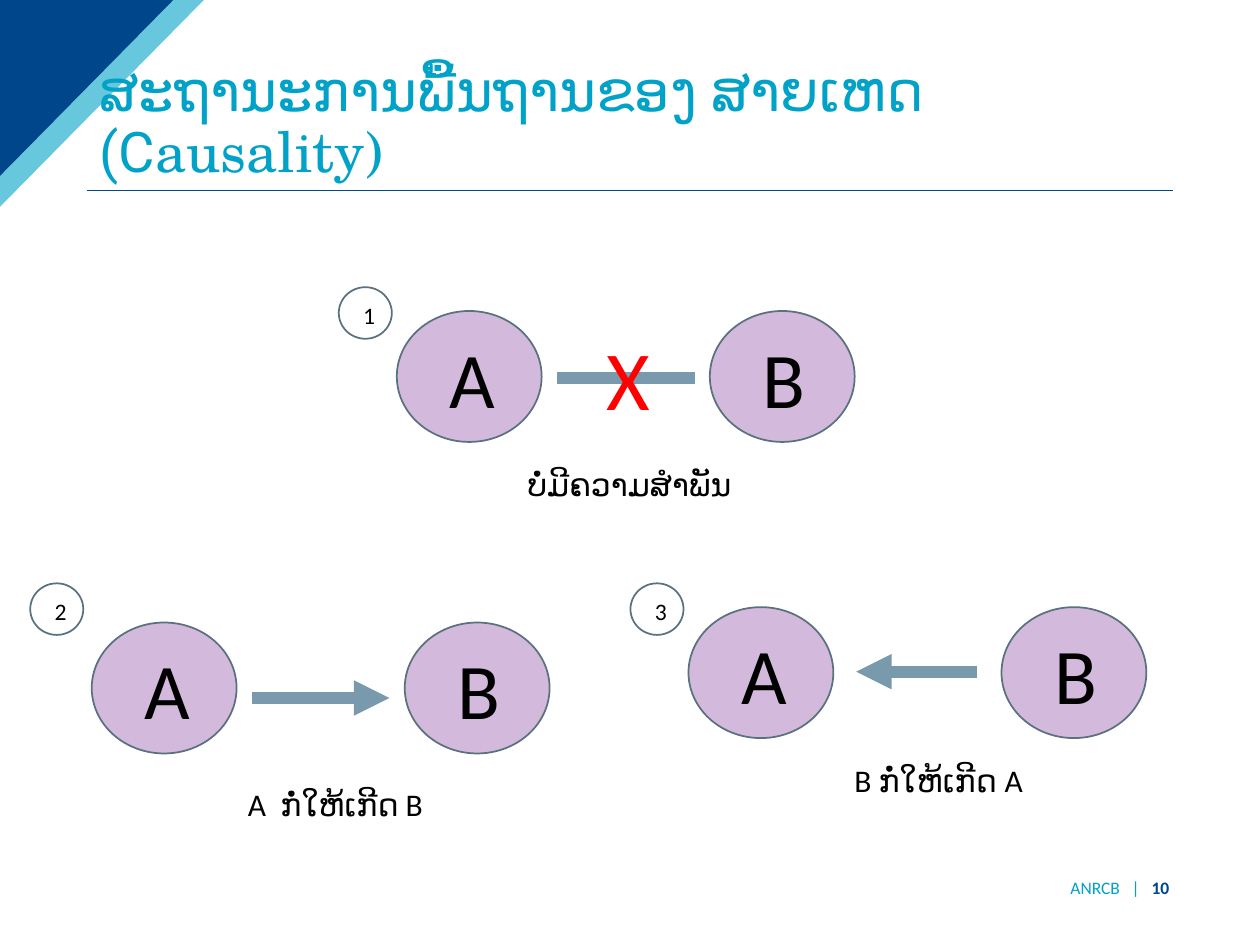
from dataclasses import dataclass
from pptx import Presentation
from pptx.dml.color import RGBColor
from pptx.enum.dml import MSO_LINE
from pptx.enum.shapes import MSO_CONNECTOR, MSO_SHAPE
from pptx.enum.text import MSO_ANCHOR, MSO_AUTO_SIZE, PP_ALIGN
from pptx.oxml.ns import qn
from pptx.util import Cm, Pt
from lxml.etree import SubElement


@dataclass(frozen=True)
class Theme:
    navy: str = "00468B"
    cyan: str = "00A2C7"
    lilac: str = "D3B9DB"
    white: str = "FFFFFF"
    edge: str = "5A717F"
    steel: str = "7999AC"
    ink: str = "000000"
    red: str = "FF0000"
    sans: str = "Calibri"
    lao: str = "Roboto"
    serif: str = "TeX Gyre Schola"
    head: float = 32
    cross: float = 48
    letter: float = 45
    label: float = 18
    badge: float = 13.5
    foot: float = 10


@dataclass(frozen=True)
class Box:
    x: float
    y: float
    w: float
    h: float

    def inset(self, dx, dy, w, h):
        return Box(self.x + dx, self.y + dy, w, h)

    def emu(self):
        return Cm(self.x), Cm(self.y), Cm(self.w), Cm(self.h)


theme = Theme()


def paint(shape, fill, edge=None):
    shape.shadow.inherit = False
    shape.fill.solid()
    shape.fill.fore_color.rgb = RGBColor.from_string(fill)
    if edge:
        shape.line.color.rgb = RGBColor.from_string(edge)
        shape.line.width = Pt(1)
    else:
        shape.line.fill.background()


def style(run, face, size, color):
    run.font.name = face
    run.font.size = Pt(size)
    run.font.color.rgb = RGBColor.from_string(color)
    SubElement(run.font._element, qn("a:cs")).set("typeface", face)


def write(frame, parts, size, color, align=PP_ALIGN.LEFT):
    para = frame.paragraphs[0]
    para.alignment = align
    para.text = parts[0][0]
    for text, _ in parts[1:]:
        para.add_run().text = text
    for run, (_, face) in zip(para.runs, parts):
        style(run, face, size, color)
    return para


def label(shapes, box, parts, size, color, align=PP_ALIGN.LEFT, wrap=True):
    frame = shapes.add_textbox(*box.emu()).text_frame
    frame.word_wrap = wrap
    return frame, write(frame, parts, size, color, align)


def disc(slide, box, inner, text, size, fill):
    shapes = slide.shapes.add_group_shape().shapes
    paint(shapes.add_shape(MSO_SHAPE.OVAL, *box.emu()), fill, theme.edge)
    label(shapes, inner, [(text, theme.sans)], size, theme.ink, wrap=False)


def rule(slide, start, end, color, width, arrow=False):
    line = slide.shapes.add_connector(
        MSO_CONNECTOR.STRAIGHT, *map(Cm, (*start, *end)))
    line.line.color.rgb = RGBColor.from_string(color)
    line.line.width = Pt(width)
    line.line.dash_style = MSO_LINE.SOLID
    if arrow:
        SubElement(line.line._ln, qn("a:tailEnd")).set("type", "triangle")
    SubElement(line._element.spPr, qn("a:effectLst"))


def corner(slide, box):
    for scale, color, alpha in ((1, theme.cyan, 60), (0.85, theme.navy, 100)):
        right, base = box.x + box.w * scale, box.y + box.h * scale
        form = slide.shapes.build_freeform(Cm(box.x), Cm(box.y))
        form.add_line_segments([(Cm(right), Cm(box.y)), (Cm(box.x), Cm(base))])
        shape = form.convert_to_shape()
        paint(shape, color)
        if alpha < 100:
            tint = shape._element.spPr.find(".//" + qn("a:srgbClr"))
            SubElement(tint, qn("a:alpha")).set("val", str(alpha * 1000))


def header(slide, box):
    rule(slide, (box.x, box.y + box.h), (box.x + box.w, box.y + box.h),
         theme.navy, 0.75)
    title = slide.shapes.title
    slide.shapes._spTree.append(title._element)
    title.left, title.top, title.width, title.height = box.emu()
    frame = title.text_frame
    frame.auto_size = MSO_AUTO_SIZE.NONE
    frame.vertical_anchor = MSO_ANCHOR.BOTTOM
    parts = [("ສະຖານະການພື້ນຖານຂອງ ສາຍເຫດ (C", theme.lao),
             ("ausality)", theme.serif)]
    write(frame, parts, theme.head, theme.cyan).line_spacing = 0.9


def case(slide, box, number, badge, link, note, parts, arrow=True):
    for dx, text in ((0, "A"), (box.w - 2.92, "B")):
        disc(slide, box.inset(dx, 0, 2.92, 2.64),
             box.inset(dx + 0.82, 0.25, 0.84, 2.18),
             text, theme.letter, theme.lilac)
    start, end, dy = link
    rule(slide, (box.x + start, box.y + dy), (box.x + end, box.y + dy),
         theme.steel, 6.75, arrow)
    if not arrow:
        label(slide.shapes, box.inset(3.51, 0.18, 2.31, 2.31),
              [("X", theme.sans)], theme.cross, theme.red, PP_ALIGN.CENTER)
    mid, top, width = note
    label(slide.shapes, box.inset(mid - width / 2, top, width, 1.02),
          parts, theme.label, theme.ink, PP_ALIGN.CENTER)
    dx, dy = badge
    disc(slide, box.inset(dx, dy, 1.07, 1.04),
         box.inset(dx + 0.24, dy + 0.15, 0.58, 0.84),
         number, theme.badge, theme.white)


def footer(slide, box):
    frame, para = label(
        slide.shapes, box,
        [("ANRCB   |   ", theme.sans), ("10", theme.sans)],
        theme.foot, theme.cyan, PP_ALIGN.RIGHT)
    frame.vertical_anchor = MSO_ANCHOR.MIDDLE
    page = para.runs[1].font
    page.bold = True
    page.color.rgb = RGBColor.from_string(theme.navy)


def main():
    deck = Presentation()
    deck.slide_width, deck.slide_height = Cm(25.4), Cm(19.05)
    slide = deck.slides.add_slide(deck.slide_layouts[5])
    corner(slide, Box(0, 0, 4.11, 4.17))
    header(slide, Box(1.75, 1.02, 21.9, 2.82))
    case(slide, Box(8, 6.27, 9.23, 2.64), "1", (-1.17, -0.48),
         (3.23, 6.02, 1.35), (4.69, 2.97, 5.56),
         [("ບໍ່ມີຄວາມສຳພັນ", theme.lao)], arrow=False)
    case(slide, Box(1.85, 12.55, 9.23, 2.64), "2", (-1.24, -0.79),
         (3.23, 6, 1.52), (4.91, 3.15, 4.39),
         [("A  ", theme.sans), ("ກໍ່ໃຫ້ເກີດ", theme.lao), (" B", theme.sans)])
    case(slide, Box(13.88, 12.24, 9.23, 2.64), "3", (-1.17, -0.48),
         (5.82, 3.38, 1.3), (5.04, 2.97, 4.19),
         [("B ", theme.sans), ("ກໍ່ໃຫ້ເກີດ ", theme.lao), ("A", theme.sans)])
    footer(slide, Box(19.63, 17.63, 4.19, 0.53))
    deck.save("out.pptx")


if __name__ == "__main__":
    main()
